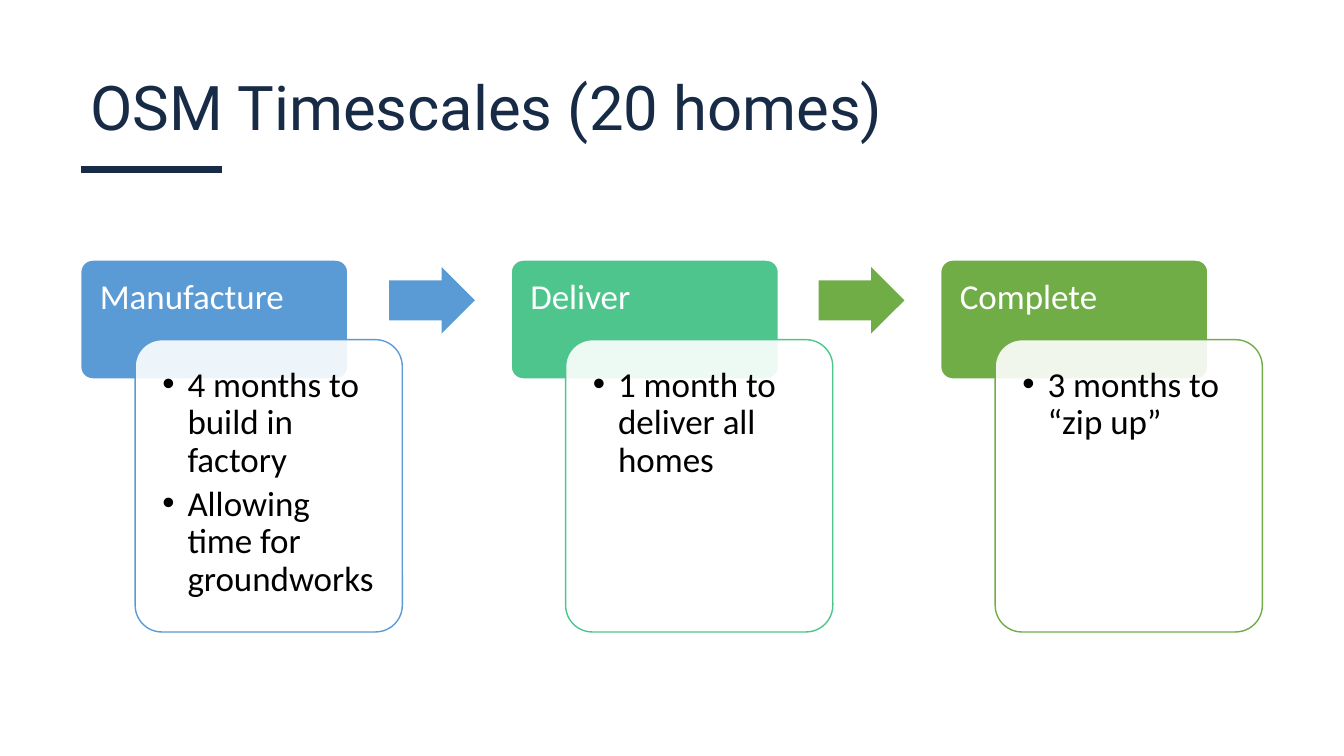
from lxml.etree import SubElement
from pptx import Presentation
from pptx.dml.color import RGBColor
from pptx.enum.shapes import MSO_CONNECTOR as Connector, MSO_SHAPE as Shape
from pptx.enum.text import MSO_ANCHOR as Anchor
from pptx.oxml.ns import qn
from pptx.util import Pt

PX = 9144
COLORS = {
    "navy": "172B46",
    "blue": "5B9BD5",
    "teal": "4DC58D",
    "green": "70AD47",
    "white": "FFFFFF",
    "black": "000000",
}
STAGES = [
    (80, "Manufacture", "blue", ["4 months to build in factory", "Allowing time for groundworks"]),
    (507, "Deliver", "teal", ["1 month to deliver all homes"]),
    (933, "Complete", "green", ["3 months to “zip up”"]),
]
ARROWS = [(386, "blue"), (812, "green")]

deck = Presentation()
deck.slide_width, deck.slide_height = 1333 * PX, 750 * PX
page = deck.slides.add_slide(deck.slide_layouts[6])


def add_text(lines, at, size=25, font="Calibri", color="black", insets=(19, 19, 19, 19), bullet=False, after=0):
    box = page.shapes.add_textbox(*[length * PX for length in at])
    frame = box.text_frame
    frame.word_wrap = True
    frame.vertical_anchor = Anchor.TOP
    frame.margin_left, frame.margin_top, frame.margin_right, frame.margin_bottom = [
        inset * PX for inset in insets
    ]
    for index, line in enumerate(lines):
        para = frame.paragraphs[0] if index == 0 else frame.add_paragraph()
        para.line_spacing = 0.9
        para.space_after = Pt(after)
        if bullet:
            para.level = 1
            properties = para._p.get_or_add_pPr()
            properties.set("marL", str(25 * PX))
            properties.set("indent", str(-25 * PX))
            SubElement(properties, qn("a:buFont")).set("typeface", "Arial")
            SubElement(properties, qn("a:buChar")).set("char", "•")
        span = para.add_run()
        span.text = line
        span.font.size = Pt(size)
        span.font.name = font
        span.font.color.rgb = RGBColor.from_string(COLORS[color])


def add_block(kind, at, fill, line=None, adjustments=(0.1,)):
    block = page.shapes.add_shape(kind, *[length * PX for length in at])
    block.shadow.inherit = False
    for index, value in enumerate(adjustments):
        block.adjustments[index] = value
    block.fill.solid()
    block.fill.fore_color.rgb = RGBColor.from_string(COLORS[fill])
    if line:
        block.line.color.rgb = RGBColor.from_string(COLORS[line])
        block.line.width = Pt(1)
    else:
        block.line.fill.background()
    return block


add_text(["OSM Timescales (20 homes)"], (80, 72, 971, 124), size=44, font="Roboto",
         color="navy", insets=(10, 5, 10, 5))

underline = page.shapes.add_connector(Connector.STRAIGHT, 80 * PX, 168 * PX, 220 * PX, 168 * PX)
underline.line.color.rgb = RGBColor.from_string(COLORS["navy"])
underline.line.width = Pt(5)
SubElement(underline._element.spPr, qn("a:effectLst"))

for left, name, color, points in STAGES:
    add_block(Shape.ROUNDED_RECTANGLE, (left, 258, 265, 118), color, line="white")
    add_text([name], (left, 258, 265, 79), color="white", insets=(19, 19, 19, 10))
    card = add_block(Shape.ROUNDED_RECTANGLE, (left + 54, 337, 265, 290), "white", line=color)
    card_color = card._element.spPr.find(qn("a:solidFill")).find(qn("a:srgbClr"))
    SubElement(card_color, qn("a:alpha")).set("val", "90000")
    add_text(points, (left + 62, 345, 250, 275), bullet=True, after=4)

for left, color in ARROWS:
    add_block(Shape.RIGHT_ARROW, (left, 265, 85, 66), color, adjustments=(0.6, 0.5))

deck.save("out.pptx")
